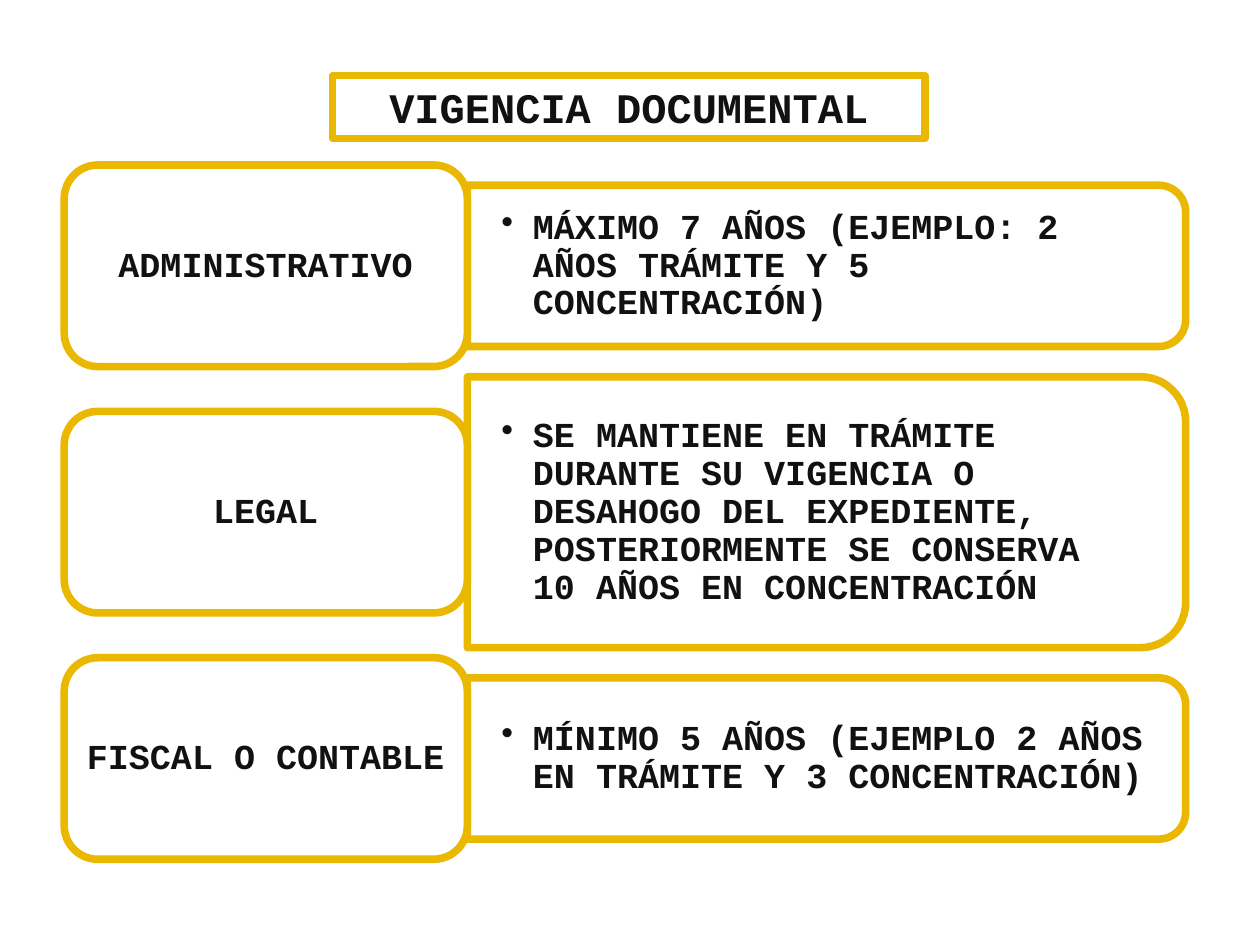
from lxml import etree
from pptx import Presentation, util as u
from pptx.dml.color import RGBColor
from pptx.enum import shapes, text
from pptx.oxml.ns import qn

COLOURS = {"paper": "FFFFFF", "gold": "EAB800", "ink": "111111"}

deck = Presentation()
deck.slide_width, deck.slide_height = u.Inches(10), u.Inches(7.5)
slide = deck.slides.add_slide(deck.slide_layouts[6])


def add_panel(preset, left, top, width, height):
    """Add a white panel with a thick gold outline and rounded joins."""
    panel = slide.shapes.add_shape(
        preset, u.Inches(left), u.Inches(top), u.Inches(width), u.Inches(height))
    panel.shadow.inherit = False
    panel.fill.solid()
    panel.fill.fore_color.rgb = RGBColor.from_string(COLOURS["paper"])
    panel.line.color.rgb = RGBColor.from_string(COLOURS["gold"])
    panel.line.width = u.Pt(4.33)
    etree.SubElement(panel.line._get_or_add_ln(), qn("a:round"))
    return panel


def write(shape, words, size=20, align=text.PP_ALIGN.CENTER, spacing=0.9,
          inset=(0.08, 0.04), bullet=False):
    frame = shape.text_frame
    frame.word_wrap = True
    frame.vertical_anchor = text.MSO_ANCHOR.MIDDLE
    frame.margin_left = frame.margin_right = u.Inches(inset[0])
    frame.margin_top = frame.margin_bottom = u.Inches(inset[1])
    paragraph = frame.paragraphs[0]
    paragraph.alignment = align
    paragraph.line_spacing = spacing
    if bullet:
        properties = paragraph._p.get_or_add_pPr()
        properties.set("marL", str(u.Inches(0.25)))
        properties.set("indent", str(-u.Inches(0.25)))
        etree.SubElement(properties, qn("a:buChar")).set("char", "•")
    run = paragraph.add_run()
    run.text = words
    run.font.name = "Courier New"
    run.font.size = u.Pt(size)
    run.font.bold = True
    run.font.color.rgb = RGBColor.from_string(COLOURS["ink"])


# Rows: category, retention rule, height of the rule panel
rows = [
    ("ADMINISTRATIVO",
     "MÁXIMO 7 AÑOS (EJEMPLO: 2 AÑOS TRÁMITE Y 5 CONCENTRACIÓN)", 1.28),
    ("LEGAL",
     "SE MANTIENE EN TRÁMITE DURANTE SU VIGENCIA O DESAHOGO DEL EXPEDIENTE, "
     "POSTERIORMENTE SE CONSERVA 10 AÑOS EN CONCENTRACIÓN", 2.15),
    ("FISCAL O CONTABLE",
     "MÍNIMO 5 AÑOS (EJEMPLO 2 AÑOS EN TRÁMITE Y 3 CONCENTRACIÓN)", 1.28),
]
category_left, category_width, category_height = 0.51, 3.2, 1.6
rule_left, rule_width = category_left + category_width, 5.7
first_middle, row_pitch = 2.11, 1.955

for index, (category, rule, rule_height) in enumerate(rows):
    middle = first_middle + index * row_pitch

    # Rule panel: upright shape turned so its round corners face right
    rule_panel = add_panel(
        shapes.MSO_SHAPE.ROUND_2_SAME_RECTANGLE,
        rule_left + (rule_width - rule_height) / 2, middle - rule_width / 2,
        rule_height, rule_width)
    rule_panel.rotation = 90

    # Rule text stays level, clear of the round corners
    corner = rule_height * 0.05
    rule_text = slide.shapes.add_textbox(
        u.Inches(rule_left), u.Inches(middle - rule_height / 2 + corner),
        u.Inches(rule_width - corner), u.Inches(rule_height - 2 * corner))
    write(rule_text, rule, align=text.PP_ALIGN.LEFT, inset=(0.27, 0.14), bullet=True)

    # Category
    category_panel = add_panel(
        shapes.MSO_SHAPE.ROUNDED_RECTANGLE, category_left,
        middle - category_height / 2, category_width, category_height)
    write(category_panel, category)

# Title
title = add_panel(shapes.MSO_SHAPE.RECTANGLE, 2.64, 0.6, 4.7, 0.5)
write(title, "VIGENCIA DOCUMENTAL", size=24, spacing=1.0, inset=(0.1, 0.05))

deck.save("out.pptx")
